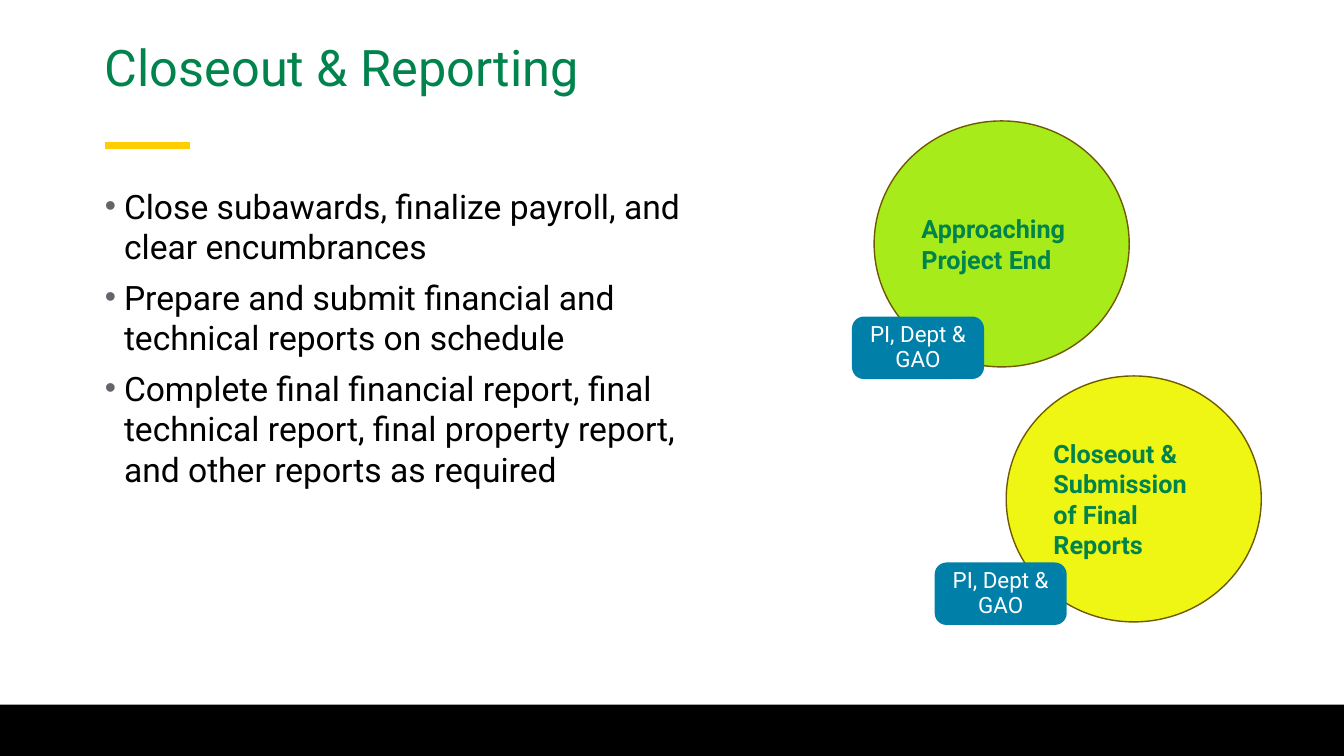
"""Build the Closeout & Reporting slide."""
from lxml import etree
from pptx import Presentation
from pptx import util as u
from pptx.dml.color import RGBColor
from pptx.enum import shapes, text
from pptx.oxml import ns

PX = 9144
FONT = "Roboto"
GREEN = RGBColor(0x00, 0x83, 0x4C)
GOLD = RGBColor(0xFF, 0xCD, 0x00)
BLACK = RGBColor(0x00, 0x00, 0x00)
WHITE = RGBColor(0xFF, 0xFF, 0xFF)
GRAY = RGBColor(0x62, 0x66, 0x6A)
LIME = RGBColor(0xA8, 0xEB, 0x1B)
YELLOW = RGBColor(0xEF, 0xF6, 0x14)
BROWN = RGBColor(0x70, 0x5A, 0x00)
BLUE = RGBColor(0x00, 0x7F, 0xA8)

DUTIES = [
    "Close subawards, finalize payroll, and clear encumbrances",
    "Prepare and submit financial and technical reports on schedule",
    "Complete final financial report, final technical report, "
    "final property report, and other reports as required",
]
STAGES = [
    ("Approaching Project End", LIME, (867, 120), (845, 314)),
    ("Closeout & Submission of Final Reports", YELLOW, (998, 373), (927, 558)),
]


def px(*lengths):
    return [u.Emu(length * PX) for length in lengths]


def set_insets(frame, horizontal, vertical):
    frame.margin_left = frame.margin_right = u.Emu(horizontal * PX)
    frame.margin_top = frame.margin_bottom = u.Emu(vertical * PX)


def style(paragraph, size, color, align=text.PP_ALIGN.LEFT, bold=False):
    paragraph.alignment = align
    font = paragraph.font
    font.name, font.size, font.bold = FONT, u.Pt(size), bold
    font.color.rgb = color


def add_filled(slide, kind, box, fill):
    shape = slide.shapes.add_shape(kind, *px(*box))
    shape.shadow.inherit = False
    shape.fill.solid()
    shape.fill.fore_color.rgb = fill
    shape.line.fill.background()
    shape.text_frame.word_wrap = True
    shape.text_frame.vertical_anchor = text.MSO_ANCHOR.MIDDLE
    return shape


def add_accent(slide):
    line = slide.shapes.add_connector(
        shapes.MSO_CONNECTOR.STRAIGHT, *px(104, 144, 188, 144))
    line.line.color.rgb = GOLD
    line.line.width = u.Pt(5)
    etree.SubElement(line.element.spPr, ns.qn("a:effectLst"))


def set_title(slide):
    title = slide.shapes.title
    title.left, title.top, title.width, title.height = px(104, 22, 1125, 95)
    frame = title.text_frame
    frame.text = "Closeout & Reporting"
    frame.vertical_anchor = text.MSO_ANCHOR.MIDDLE
    set_insets(frame, 0, 0)
    frame.paragraphs[0].line_spacing = 0.9
    style(frame.paragraphs[0], 36, GREEN)


def add_bullet(paragraph):
    properties = paragraph._p.get_or_add_pPr()
    properties.set("marL", str(19 * PX))
    properties.set("indent", str(-19 * PX))
    color = etree.SubElement(properties, ns.qn("a:buClr"))
    etree.SubElement(color, ns.qn("a:srgbClr"), val=str(GRAY))
    etree.SubElement(properties, ns.qn("a:buSzPct"), val="95000")
    etree.SubElement(properties, ns.qn("a:buFont"), typeface="Arial")
    etree.SubElement(properties, ns.qn("a:buChar"), char="•")


def add_duties(slide):
    frame = slide.shapes.add_textbox(*px(104, 184, 594, 466)).text_frame
    frame.word_wrap = True
    set_insets(frame, 0, 0)
    for index, duty in enumerate(DUTIES):
        paragraph = frame.add_paragraph() if index else frame.paragraphs[0]
        paragraph.text = duty
        add_bullet(paragraph)
        if index:
            paragraph.space_before = u.Pt(7.5)
        style(paragraph, 24, BLACK)


def add_stage(slide, label, fill, position):
    circle = add_filled(
        slide, shapes.MSO_SHAPE.OVAL, (*position, 253, 244), fill)
    circle.line.color.rgb = BROWN
    circle.line.width = u.Pt(1)
    circle.text_frame.text = label
    style(circle.text_frame.paragraphs[0], 18, GREEN, bold=True)


def add_owner(slide, position):
    tag = add_filled(
        slide, shapes.MSO_SHAPE.ROUNDED_RECTANGLE, (*position, 131, 62), BLUE)
    tag.adjustments[0] = 0.19
    frame = tag.text_frame
    frame.text = "PI, Dept & GAO"
    set_insets(frame, 10, 0)
    frame.paragraphs[0].line_spacing = 0.9
    style(frame.paragraphs[0], 16, WHITE, text.PP_ALIGN.CENTER)


def main():
    presentation = Presentation()
    presentation.slide_width, presentation.slide_height = px(1333, 750)
    slide = presentation.slides.add_slide(presentation.slide_layouts[5])
    add_accent(slide)
    add_filled(slide, shapes.MSO_SHAPE.RECTANGLE, (0, 699, 1333, 51), BLACK)
    set_title(slide)
    add_duties(slide)
    for label, fill, circle_position, _ in STAGES:
        add_stage(slide, label, fill, circle_position)
    for *_, owner_position in STAGES:
        add_owner(slide, owner_position)
    presentation.save("out.pptx")


if __name__ == "__main__":
    main()
